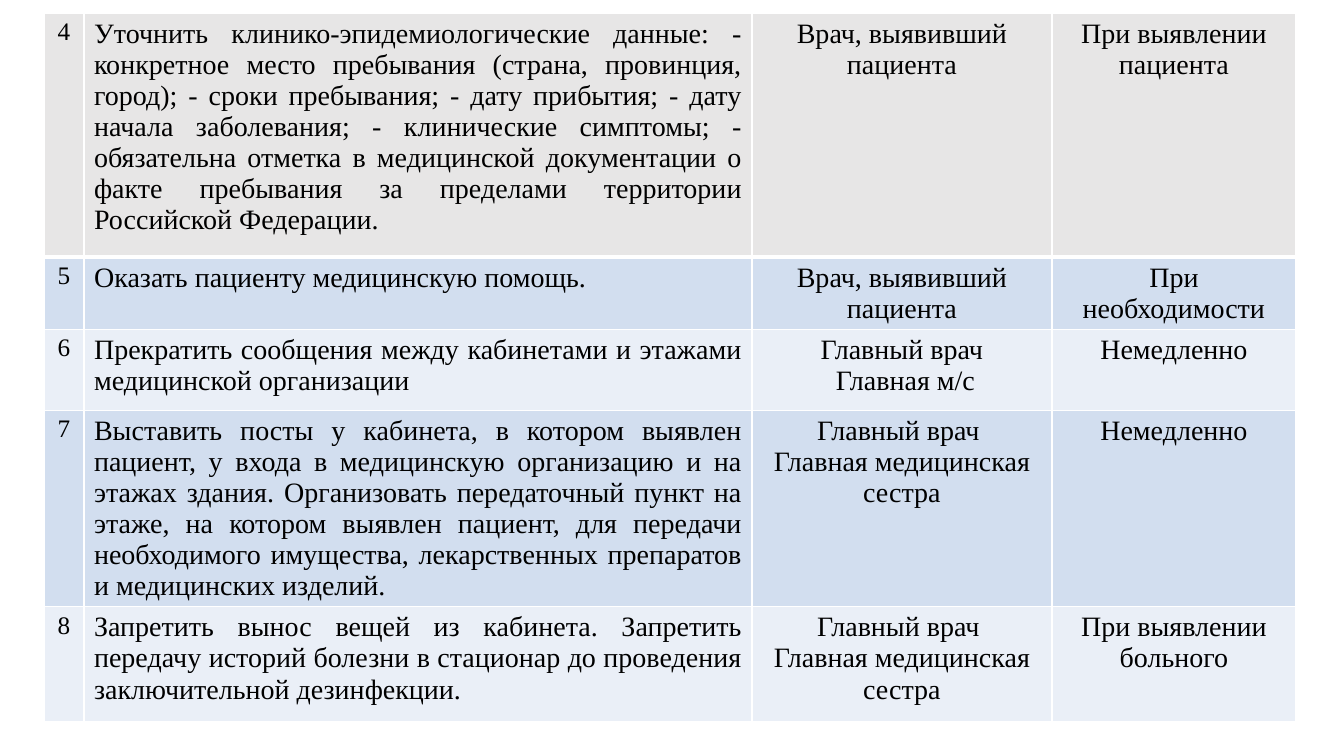
from dataclasses import dataclass

from lxml.etree import SubElement
from pptx import Presentation
from pptx.dml.color import RGBColor
from pptx.enum.text import PP_ALIGN
from pptx.oxml.ns import qn
from pptx.util import Pt

PX = 9071


@dataclass(frozen=True)
class Theme:
    """Colours, type and line sizes of the slide."""
    font: str = "Times New Roman"
    ink: str = "000000"
    line: str = "FFFFFF"
    top_fill: str = "E7E6E6"
    band_fills: tuple = ("EAEFF7", "D2DEEF")
    number_size: int = 18
    body_size: int = 20
    thin: int = 1
    thick: int = 3


THEME = Theme()
COLUMN_WIDTHS = (40, 668, 300, 244)
COLUMN_ALIGNS = (PP_ALIGN.CENTER, PP_ALIGN.JUSTIFY, PP_ALIGN.CENTER, PP_ALIGN.CENTER)
COLUMN_SIZES = (THEME.number_size,) + (THEME.body_size,) * 3
ROW_HEIGHTS = (244, 72, 81, 196, 115)
ACTIONS = (
    ("4",
     "Уточнить клинико-эпидемиологические данные: - конкретное место пребывания "
     "(страна, провинция, город); - сроки пребывания; - дату прибытия; - дату начала "
     "заболевания; - клинические симптомы; - обязательна отметка в медицинской "
     "документации о факте пребывания за пределами территории Российской Федерации.",
     "Врач, выявивший пациента", "При выявлении пациента"),
    ("5", "Оказать пациенту медицинскую помощь.",
     "Врач, выявивший пациента", "При необходимости"),
    ("6", "Прекратить сообщения между кабинетами и этажами медицинской организации",
     "Главный врач\n Главная м/с", "Немедленно"),
    ("7",
     "Выставить посты у кабинета, в котором выявлен пациент, у входа в медицинскую "
     "организацию и на этажах здания. Организовать передаточный пункт на этаже, на "
     "котором выявлен пациент, для передачи необходимого имущества, лекарственных "
     "препаратов и медицинских изделий.",
     "Главный врач \nГлавная медицинская сестра", "Немедленно"),
    ("8",
     "Запретить вынос вещей из кабинета. Запретить передачу историй болезни в "
     "стационар до проведения заключительной дезинфекции.",
     "Главный врач \nГлавная медицинская сестра", "При выявлении больного"),
)


def set_borders(cell, widths):
    """Draw the cell edges, given a width in points for each side."""
    properties = cell._tc.get_or_add_tcPr()
    for position, (side, width) in enumerate(widths.items()):
        edge = properties.makeelement(qn(f"a:ln{side}"), {"w": str(Pt(width))})
        fill = SubElement(edge, qn("a:solidFill"))
        SubElement(fill, qn("a:srgbClr"), {"val": THEME.line})
        properties.insert(position, edge)


def fill_cell(cell, text, fill, align, size):
    """Write the text of one cell and colour it."""
    cell.fill.solid()
    cell.fill.fore_color.rgb = RGBColor.from_string(fill)
    cell.text_frame.text = text
    for para in cell.text_frame.paragraphs:
        para.alignment = align
        for span in para.runs:
            for name, value in {"name": THEME.font, "size": Pt(size), "bold": False}.items():
                setattr(span.font, name, value)
            span.font.color.rgb = RGBColor.from_string(THEME.ink)


def add_action_table(page, box):
    """Place the table of actions at the left, top, width and height of the box."""
    table = page.shapes.add_table(
        len(ACTIONS), len(COLUMN_WIDTHS), *(length * PX for length in box)).table
    for name, value in {"first_row": False, "horz_banding": False}.items():
        setattr(table, name, value)
    for column, width in zip(table.columns, COLUMN_WIDTHS):
        column.width = width * PX
    for index, (row, height, texts) in enumerate(zip(table.rows, ROW_HEIGHTS, ACTIONS)):
        row.height = height * PX
        fill = THEME.band_fills[index % 2] if index else THEME.top_fill
        widths = dict.fromkeys("LRTB", THEME.thin)
        if index == 0:
            widths["B"] = THEME.thick
        for cell, text, align, size in zip(row.cells, texts, COLUMN_ALIGNS, COLUMN_SIZES):
            fill_cell(cell, text, fill, align, size)
            set_borders(cell, widths)


def main():
    """Build the deck and save it."""
    deck = Presentation()
    deck.slide_width, deck.slide_height = 1344 * PX, 756 * PX
    page = deck.slides.add_slide(deck.slide_layouts[6])
    add_action_table(page, (44, 13, sum(COLUMN_WIDTHS), sum(ROW_HEIGHTS)))
    deck.save("out.pptx")


if __name__ == "__main__":
    main()
